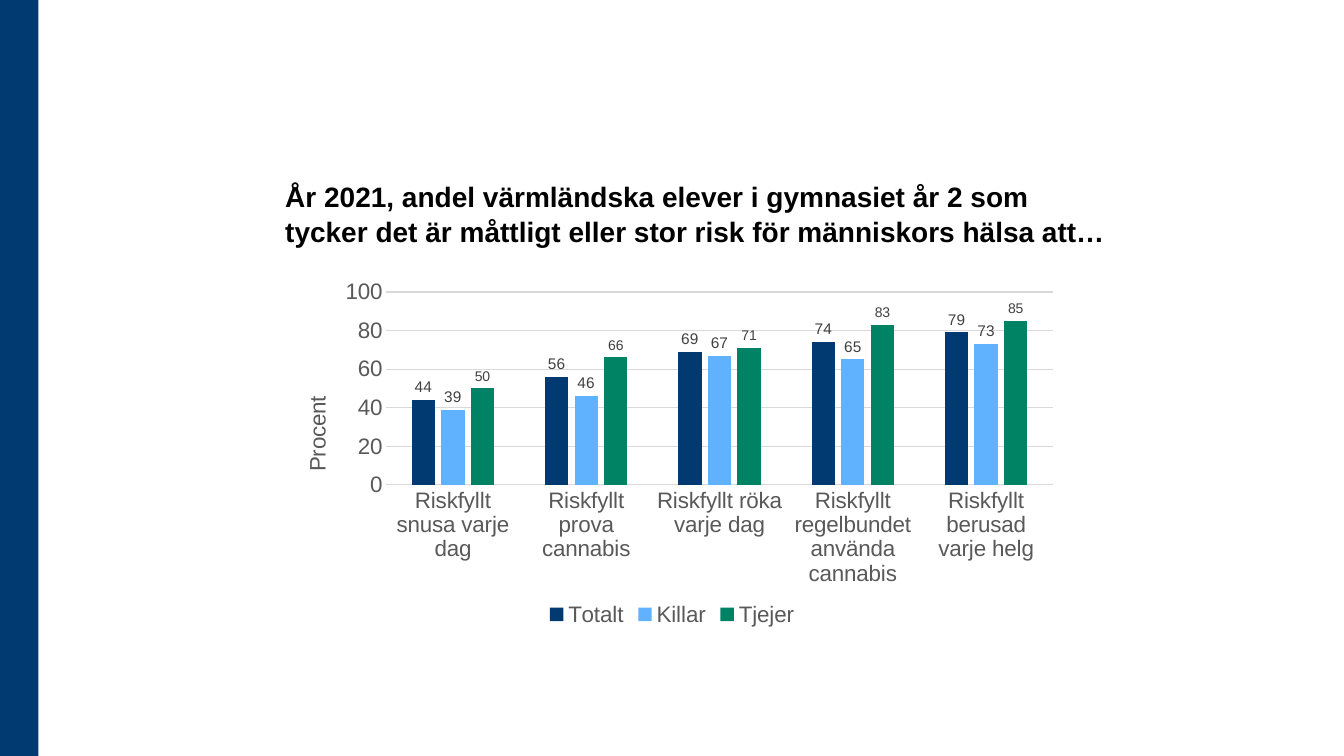
from lxml import etree
from pptx import Presentation
from pptx.chart.data import CategoryChartData
from pptx.dml.color import RGBColor
from pptx.enum.chart import (XL_CHART_TYPE, XL_LABEL_POSITION,
                             XL_LEGEND_POSITION, XL_TICK_MARK)
from pptx.enum.shapes import MSO_SHAPE
from pptx.enum.text import MSO_ANCHOR
from pptx.oxml.ns import qn
from pptx.util import Inches, Pt

COLUMNS = XL_CHART_TYPE.COLUMN_CLUSTERED
OUTSIDE_END = XL_LABEL_POSITION.OUTSIDE_END
LEGEND_BOTTOM = XL_LEGEND_POSITION.BOTTOM
NO_TICK = XL_TICK_MARK.NONE
RECTANGLE = MSO_SHAPE.RECTANGLE
BOTTOM = MSO_ANCHOR.BOTTOM

# Content
HEADING = ("År 2021, andel värmländska elever i gymnasiet år 2 som "
           "tycker det är måttligt eller stor risk för människors hälsa att…")
UNIT = "Procent"
QUESTIONS = [
    "Riskfyllt snusa varje dag",
    "Riskfyllt prova cannabis",
    "Riskfyllt röka varje dag",
    "Riskfyllt regelbundet använda cannabis",
    "Riskfyllt berusad varje helg",
]
# Group, percentages, colour, label size
GROUPS = [
    ("Totalt", (44, 56, 69, 74, 79), "003A70", 11),
    ("Killar", (39, 46, 67, 65, 73), "60B2FF", 11),
    ("Tjejer", (50, 66, 71, 83, 85), "008264", 10),
]

# Format
NAVY, BLACK, GREY, LABEL_GREY, RULE = "003A70", "000000", "595959", "404040", "D9D9D9"
HEADING_BOX = (2.73, 1.06, 8.38, 1.45)
CHART_BOX = (2.73, 2.72, 7.87, 3.54)
PLOT_LAYOUT = {"layoutTarget": "inner", "xMode": "edge", "yMode": "edge",
               "x": 0.14, "y": 0.05, "w": 0.84, "h": 0.54}
UNIT_LAYOUT = {"xMode": "edge", "yMode": "edge", "x": 0.03, "y": 0.33}


def rgb(hex_colour):
    return RGBColor.from_string(hex_colour)


def style_font(font, size, colour, bold=False):
    for name, value in {"name": "Arial", "size": Pt(size), "bold": bold}.items():
        setattr(font, name, value)
    font.color.rgb = rgb(colour)


def style_line(line, colour):
    line.color.rgb = rgb(colour)
    line.width = Pt(0.75)


def place(parent, index, values):
    """Give a chart part a manual layout."""
    layout = parent.find(qn("c:layout"))
    if layout is None:
        layout = etree.Element(qn("c:layout"))
        parent.insert(index, layout)
    manual = etree.SubElement(layout, qn("c:manualLayout"))
    for tag, value in values.items():
        etree.SubElement(manual, qn(f"c:{tag}")).set("val", str(value))


prs = Presentation()
prs.slide_width, prs.slide_height = Inches(13.33), Inches(7.5)
slide = prs.slides.add_slide(prs.slide_layouts[6])

# Side band
band = slide.shapes.add_shape(RECTANGLE, 0, 0, Inches(0.38), prs.slide_height)
band.shadow.inherit = False
band.fill.solid()
band.fill.fore_color.rgb = rgb(NAVY)
band.line.fill.background()

# Heading
heading = slide.shapes.add_textbox(*map(Inches, HEADING_BOX)).text_frame
heading.word_wrap = True
heading.vertical_anchor = BOTTOM
heading.text = HEADING
heading.paragraphs[0].line_spacing = 1.05
style_font(heading.paragraphs[0].runs[0].font, 20, BLACK, bold=True)

# Chart
data = CategoryChartData(number_format="0")
data.categories = QUESTIONS
for group, percentages, _, _ in GROUPS:
    data.add_series(group, percentages)
chart = slide.shapes.add_chart(COLUMNS, *map(Inches, CHART_BOX), data).chart
style_font(chart.font, 16, BLACK)
chart.has_title = False
chart.has_legend = True
chart.legend.position = LEGEND_BOTTOM
chart.legend.include_in_layout = False
style_font(chart.legend.font, 16, GREY)

# Columns and their labels
plot = chart.plots[0]
plot.gap_width, plot.overlap, plot.vary_by_categories = 219, -27, False
for series, (_, _, colour, label_size) in zip(plot.series, GROUPS):
    series.format.fill.solid()
    series.format.fill.fore_color.rgb = rgb(colour)
    labels = series.data_labels
    for name, value in {"show_value": True, "position": OUTSIDE_END,
                        "number_format": "0",
                        "number_format_is_linked": False}.items():
        setattr(labels, name, value)
    style_font(labels.font, label_size, LABEL_GREY)

# Axes
questions, percent = chart.category_axis, chart.value_axis
for axis in (questions, percent):
    axis.major_tick_mark = axis.minor_tick_mark = NO_TICK
    style_font(axis.tick_labels.font, 16, GREY)
style_line(questions.format.line, RULE)
for name, value in {"minimum_scale": 0, "maximum_scale": 100, "major_unit": 20,
                    "has_major_gridlines": True}.items():
    setattr(percent, name, value)
percent.format.line.fill.background()
style_line(percent.major_gridlines.format.line, RULE)
percent.tick_labels.number_format = "0"
percent.tick_labels.number_format_is_linked = False

unit = percent.axis_title.text_frame
unit.text = UNIT
style_font(unit.paragraphs[0].runs[0].font, 16, GREY)

# Plot area and unit positions
plot_area = chart.element.find(".//" + qn("c:plotArea"))
place(plot_area, 0, PLOT_LAYOUT)
place(plot_area.find(qn("c:valAx")).find(qn("c:title")), 1, UNIT_LAYOUT)

prs.save("out.pptx")
